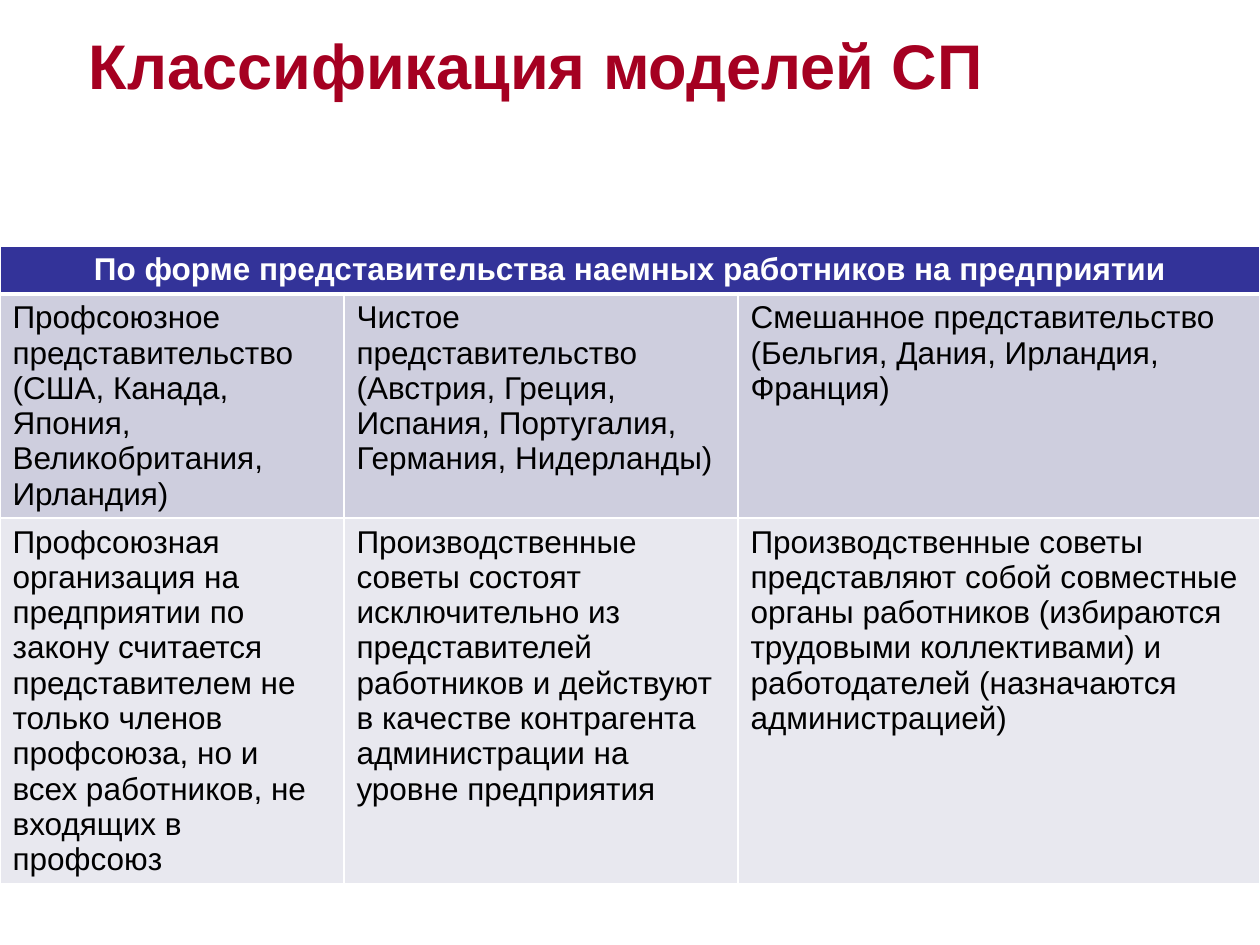
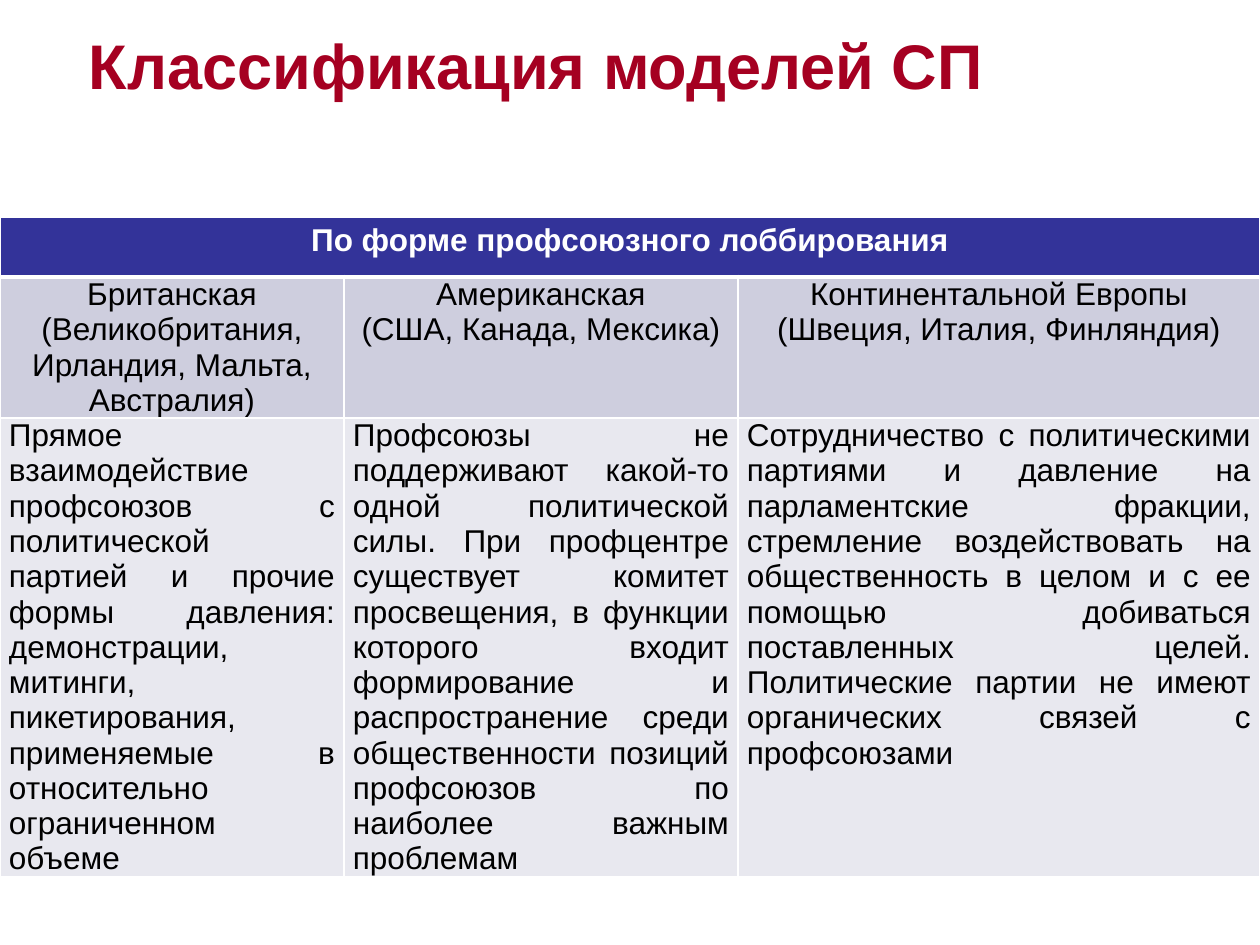
from lxml.etree import SubElement
from pptx import Presentation
from pptx.dml.color import RGBColor
from pptx.enum.text import MSO_ANCHOR as ANCHOR, PP_ALIGN as ALIGN
from pptx.oxml.ns import qn
from pptx.util import Emu, Pt

RED = RGBColor(0xA5, 0x00, 0x21)
BLUE = RGBColor(0x33, 0x33, 0x99)
LILAC = RGBColor(0xCE, 0xCE, 0xDE)
PALE = RGBColor(0xE8, 0xE8, 0xEF)
WHITE = RGBColor(0xFF, 0xFF, 0xFF)
BLACK = RGBColor(0x00, 0x00, 0x00)

EMU_PER_PX = 914400 / 126
TITLE = "Классификация моделей СП"
TITLE_PLACE = {"left": 49, "top": 29, "width": 974, "height": 70}
TITLE_FONT = {"name": "Arial", "size": Pt(36), "bold": True}
CELL_FONT = {"name": "Arial", "size": Pt(18)}
COLUMN_WIDTHS = [344, 394, 522]
ROW_FILLS = [BLUE, LILAC, PALE]

TABLES = [
    {
        "top": 246,
        "row_heights": [48, 224, 365],
        "aligns": [ALIGN.CENTER, ALIGN.LEFT, ALIGN.LEFT],
        "margins": {},
        "rows": [
            ["По форме представительства наемных работников на предприятии"],
            [
                "Профсоюзное представительство\n(США, Канада, Япония, Великобритания, Ирландия)",
                "Чистое представительство\n(Австрия, Греция, Испания, Португалия, Германия, Нидерланды)",
                "Смешанное представительство\n(Бельгия, Дания, Ирландия, Франция)",
            ],
            [
                "Профсоюзная организация на предприятии по закону считается представителем "
                "не только членов профсоюза, но и всех работников, не входящих в профсоюз",
                "Производственные советы состоят исключительно из представителей работников "
                "и действуют в качестве контрагента администрации на уровне предприятия",
                "Производственные советы представляют собой совместные органы работников "
                "(избираются трудовыми коллективами) и работодателей (назначаются администрацией)",
            ],
        ],
    },
    {
        "top": 217,
        "row_heights": [60, 141, 459],
        "aligns": [ALIGN.CENTER, ALIGN.CENTER, ALIGN.JUSTIFY],
        "margins": {"margin_left": 9, "margin_right": 9, "margin_top": 0, "margin_bottom": 0},
        "rows": [
            ["По форме профсоюзного лоббирования"],
            [
                "Британская\n(Великобритания, Ирландия, Мальта, Австралия)",
                "Американская\n(США, Канада, Мексика)",
                "Континентальной Европы\n(Швеция, Италия, Финляндия)",
            ],
            [
                "Прямое взаимодействие профсоюзов с политической партией и прочие формы давления: "
                "демонстрации, митинги, пикетирования, применяемые в относительно ограниченном объеме",
                "Профсоюзы не поддерживают какой-то одной политической силы. При профцентре "
                "существует комитет просвещения, в функции которого входит формирование и "
                "распространение среди общественности позиций профсоюзов по наиболее важным проблемам",
                "Сотрудничество с политическими партиями и давление на парламентские фракции, "
                "стремление воздействовать на общественность в целом и с ее помощью добиваться "
                "поставленных целей. Политические партии не имеют органических связей с профсоюзами",
            ],
        ],
    },
]


def px(length):
    return Emu(round(length * EMU_PER_PX))


def write(frame, text, align, color, font_format):
    frame.text = text
    for para in frame.paragraphs:
        para.alignment = align
        for span in para.runs:
            span.font.color.rgb = color
            for name, value in font_format.items():
                setattr(span.font, name, value)


deck = Presentation()
deck.slide_width, deck.slide_height = px(1260), px(945)

for content in TABLES:
    page = deck.slides.add_slide(deck.slide_layouts[5])
    title = page.shapes.title
    for name, length in TITLE_PLACE.items():
        setattr(title, name, px(length))
    write(title.text_frame, TITLE, ALIGN.CENTER, RED, TITLE_FONT)
    title.text_frame.vertical_anchor = ANCHOR.MIDDLE

    heights = content["row_heights"]
    table = page.shapes.add_table(
        len(heights), len(COLUMN_WIDTHS),
        px(0), px(content["top"]), px(sum(COLUMN_WIDTHS)), px(sum(heights)),
    ).table
    table.horz_banding = False
    for column, width in zip(table.columns, COLUMN_WIDTHS):
        column.width = px(width)

    for row_index, row in enumerate(table.rows):
        row.height = px(heights[row_index])
        is_header = row_index == 0
        line_widths = {
            "a:lnL": 1, "a:lnR": 1,
            "a:lnT": 3 if row_index == 1 else 1,
            "a:lnB": 3 if is_header else 1,
        }
        for cell in row.cells:
            properties = cell._tc.get_or_add_tcPr()
            for tag, width in line_widths.items():
                line = SubElement(properties, qn(tag), w=str(Pt(width)))
                fill = SubElement(line, qn("a:solidFill"))
                SubElement(fill, qn("a:srgbClr"), val=str(WHITE))
            cell.fill.solid()
            cell.fill.fore_color.rgb = ROW_FILLS[row_index]

        for cell, text in zip(row.cells, content["rows"][row_index]):
            write(cell.text_frame, text, content["aligns"][row_index],
                  WHITE if is_header else BLACK, CELL_FONT | {"bold": is_header})
            if not is_header:
                for name, length in content["margins"].items():
                    setattr(cell, name, px(length))

    table.cell(0, 0).merge(table.cell(0, len(COLUMN_WIDTHS) - 1))

deck.save("out.pptx")
